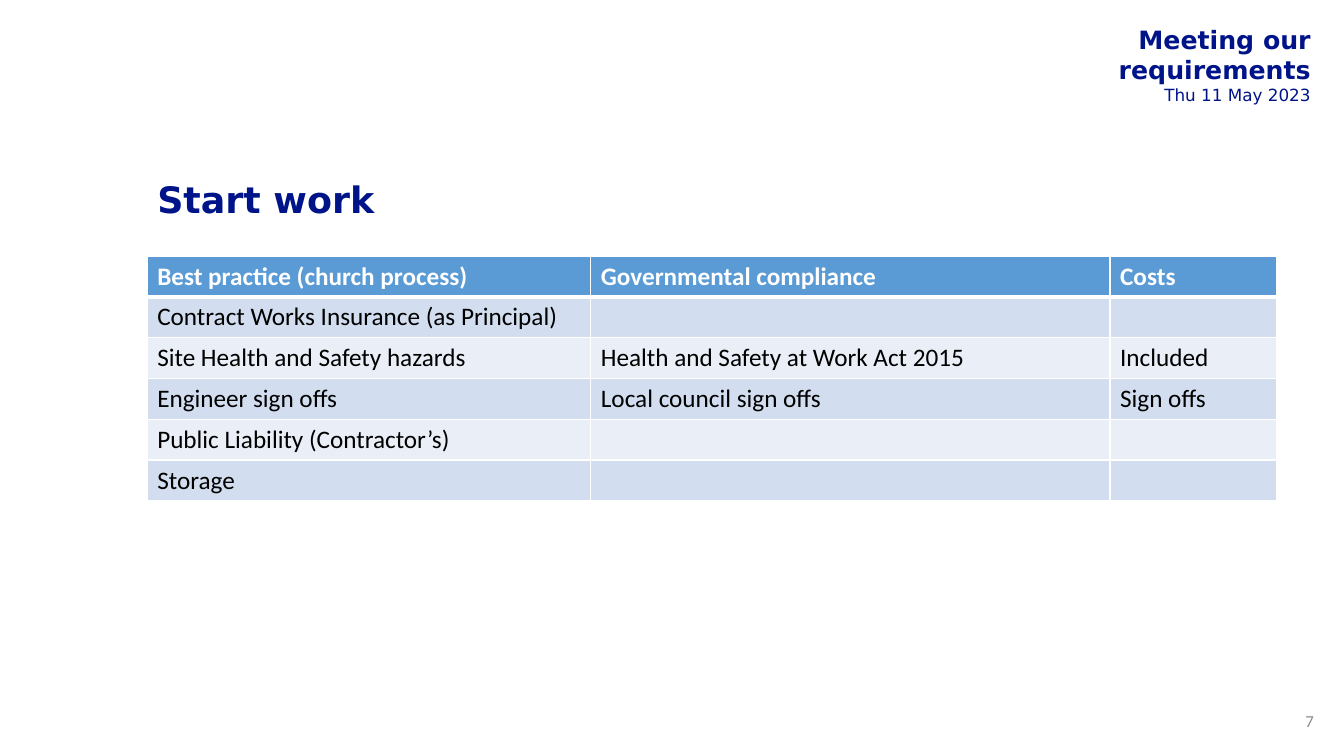
from lxml.etree import SubElement
from pptx import Presentation
from pptx.dml.color import RGBColor
from pptx.enum.text import MSO_ANCHOR, PP_ALIGN
from pptx.oxml.ns import qn
from pptx.util import Inches, Pt

NAVY, GREY, WHITE, BLACK = "001489", "8C8C8C", "FFFFFF", "000000"
HEADER_FILL, BAND_FILLS = "5B9BD5", ("EAEFF7", "D2DEEF")
HEADING_FONT, BODY_FONT = "DejaVu Sans", "Calibri"
ROW_HEIGHT = 0.405
COLUMN_WIDTHS = (4.4, 5.15, 1.65)
REQUIREMENTS = (
    ("Best practice (church process)", "Governmental compliance", "Costs"),
    ("Contract Works Insurance (as Principal)", "", ""),
    ("Site Health and Safety hazards", "Health and Safety at Work Act 2015", "Included"),
    ("Engineer sign offs", "Local council sign offs", "Sign offs"),
    ("Public Liability (Contractor’s)", "", ""),
    ("Storage", "", ""),
)


def paint(target, color):
    target.rgb = RGBColor.from_string(color)


def write(paragraph, text, color, align=PP_ALIGN.LEFT, **font_format):
    paragraph.text = text
    paragraph.alignment = align
    for attribute, value in font_format.items():
        setattr(paragraph.font, attribute, value)
    paint(paragraph.font.color, color)


def add_meeting_header(slide, box):
    frame = slide.shapes.add_textbox(*map(Inches, box)).text_frame
    frame.word_wrap = True
    margins = {"left": 0.3, "right": 0.07, "top": 0.04, "bottom": 0.04}
    for side, inset in margins.items():
        setattr(frame, f"margin_{side}", Inches(inset))
    write(frame.paragraphs[0], "Meeting our requirements", NAVY, PP_ALIGN.RIGHT,
          name=HEADING_FONT, size=Pt(18), bold=True)
    write(frame.add_paragraph(), "Thu 11 May 2023", NAVY, PP_ALIGN.RIGHT,
          name=HEADING_FONT, size=Pt(12), bold=False)


def place_title(slide, box):
    title = slide.shapes.title
    for attribute, length in zip(("left", "top", "width", "height"), box):
        setattr(title, attribute, Inches(length))
    title.text_frame.vertical_anchor = MSO_ANCHOR.MIDDLE
    heading = title.text_frame.paragraphs[0]
    write(heading, "Start work", NAVY, name=HEADING_FONT, size=Pt(26), bold=True)
    heading.line_spacing = 0.9


def add_page_number(slide, box):
    frame = slide.shapes.add_textbox(*map(Inches, box)).text_frame
    frame.word_wrap = True
    frame.vertical_anchor = MSO_ANCHOR.MIDDLE
    write(frame.paragraphs[0], "7", GREY, PP_ALIGN.RIGHT, name=BODY_FONT, size=Pt(12))


def add_borders(cell, widths):
    properties = cell._tc.get_or_add_tcPr()
    for side, width in widths.items():
        line = SubElement(properties, qn(f"a:ln{side}"), w=str(Pt(width)))
        SubElement(SubElement(line, qn("a:solidFill")), qn("a:srgbClr"), val=WHITE)


def add_requirements_table(slide, left, top):
    size = (sum(COLUMN_WIDTHS), ROW_HEIGHT * len(REQUIREMENTS))
    table = slide.shapes.add_table(len(REQUIREMENTS), len(COLUMN_WIDTHS),
                                   *map(Inches, (left, top, *size))).table
    for column, width in zip(table.columns, COLUMN_WIDTHS):
        column.width = Inches(width)
    for row, texts in enumerate(REQUIREMENTS):
        is_header = row == 0
        for column, text in enumerate(texts):
            cell = table.cell(row, column)
            add_borders(cell, {"L": 1, "R": 1, "T": 3 if row == 1 else 1,
                               "B": 3 if is_header else 1})
            cell.fill.solid()
            paint(cell.fill.fore_color, HEADER_FILL if is_header else BAND_FILLS[row % 2])
            write(cell.text_frame.paragraphs[0], text, WHITE if is_header else BLACK,
                  name=BODY_FONT, size=Pt(18), bold=is_header)


def main():
    presentation = Presentation()
    presentation.slide_width, presentation.slide_height = Inches(13.33), Inches(7.5)
    slide = presentation.slides.add_slide(presentation.slide_layouts[5])
    add_meeting_header(slide, (9.22, 0.2, 3.85, 0.88))
    place_title(slide, (1.46, 1.5, 11.2, 1.01))
    add_page_number(slide, (12.71, 6.95, 0.42, 0.4))
    add_requirements_table(slide, 1.46, 2.54)
    presentation.save("out.pptx")


if __name__ == "__main__":
    main()
